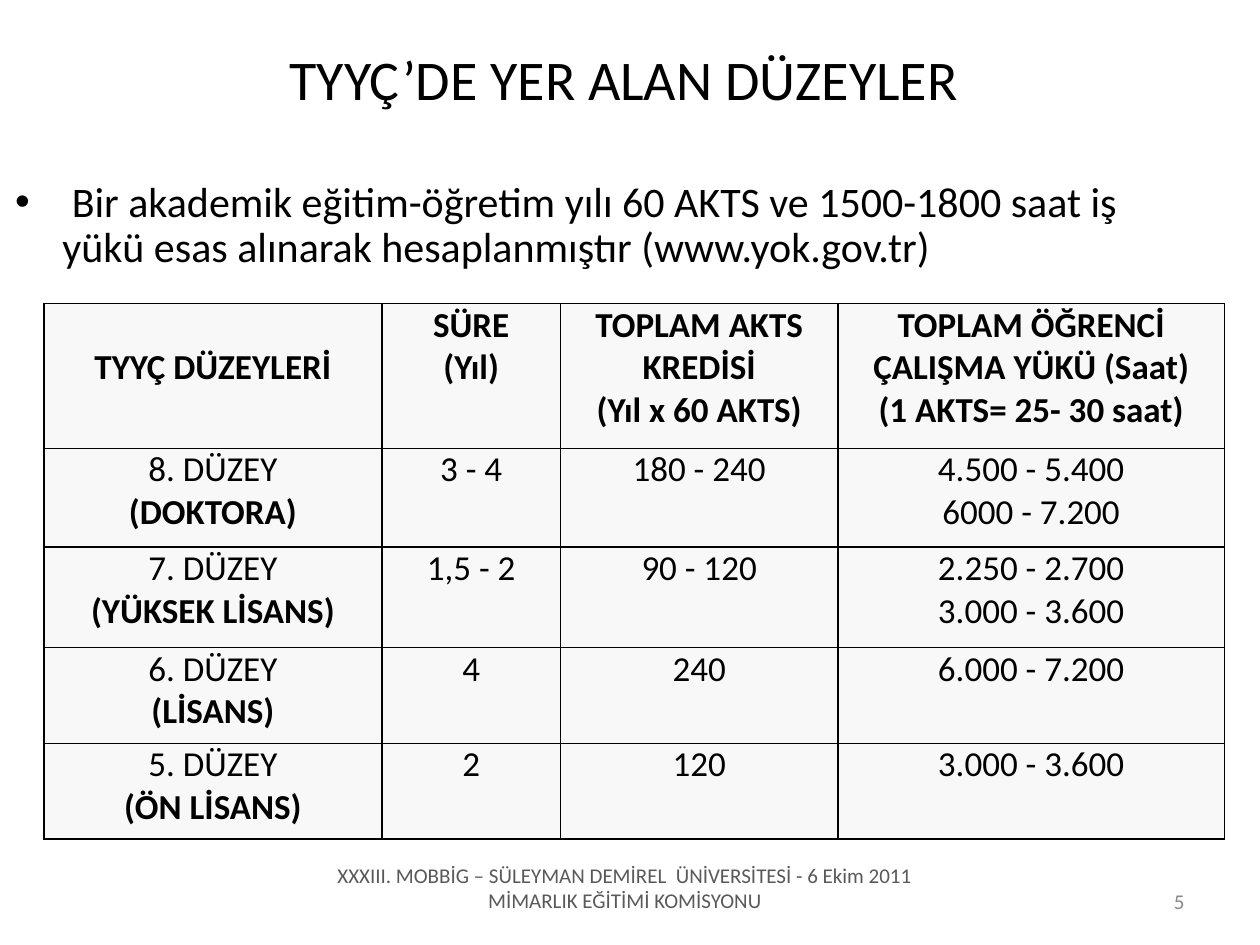
from lxml.etree import SubElement
from pptx import Presentation
from pptx.dml.color import RGBColor
from pptx.enum.text import MSO_ANCHOR as Anchor, MSO_AUTO_SIZE as AutoSize, PP_ALIGN as Align
from pptx.oxml.ns import qn
from pptx.util import Pt

# Content: a cell is a list of lines, a line marked with True is bold
TITLE = "TYYÇ’DE YER ALAN DÜZEYLER"
BODY = (" Bir akademik eğitim-öğretim yılı 60 AKTS ve 1500-1800 saat iş yükü "
        "esas alınarak hesaplanmıştır (www.yok.gov.tr)")
HEADER = [
    ["TYYÇ DÜZEYLERİ"],
    ["SÜRE", "(Yıl)"],
    ["TOPLAM AKTS KREDİSİ", "(Yıl x 60 AKTS)"],
    ["TOPLAM ÖĞRENCİ ÇALIŞMA YÜKÜ (Saat)", "(1 AKTS= 25- 30 saat)"],
]
LEVELS = [
    ("8. DÜZEY", "(DOKTORA)", "3 - 4", "180 - 240", ["4.500 - 5.400", "6000 - 7.200"]),
    ("7. DÜZEY", "(YÜKSEK LİSANS)", "1,5 - 2", "90 - 120", ["2.250 - 2.700", "3.000 - 3.600"]),
    ("6. DÜZEY", "(LİSANS)", "4", "240", ["6.000 - 7.200"]),
    ("5. DÜZEY", "(ÖN LİSANS)", "2", "120", ["3.000 - 3.600"]),
]
FOOTER = ["XXXIII. MOBBİG – SÜLEYMAN DEMİREL  ÜNİVERSİTESİ - 6 Ekim 2011",
          "MİMARLIK EĞİTİMİ KOMİSYONU"]
PAGE = "5"

# Format
FONT = "Calibri"
BLACK = RGBColor(0x00, 0x00, 0x00)
DARK_GREY = RGBColor(0x59, 0x59, 0x59)
GREY = RGBColor(0x89, 0x89, 0x89)
CELL_FILL = RGBColor(0xF8, 0xF8, 0xF8)
COL_WIDTHS = [193, 102.2, 158.4, 221]
ROW_HEIGHTS = [82.8, 56.2, 57.6, 54.7, 54.7]
HEADER_LINE = 24.4


def write(p, *lines, size, color=BLACK, bold=(False,), align=Align.CENTER):
    """Fill a paragraph with lines; bold holds one flag per line, or one for all."""
    p.alignment = align
    flags = bold if len(bold) == len(lines) else bold * len(lines)
    for i, (line, flag) in enumerate(zip(lines, flags)):
        if i:
            p.add_line_break()
        r = p.add_run()
        r.text = line
        f = r.font
        f.name, f.size, f.bold = FONT, Pt(size), flag
        f.color.rgb = color


def place(sp, left, top, width, height, anchor):
    sp.left, sp.top, sp.width, sp.height = map(Pt, (left, top, width, height))
    tf = sp.text_frame
    tf.word_wrap = True
    tf.auto_size = AutoSize.NONE
    tf.vertical_anchor = anchor
    return tf


def add_borders(cell):
    tc_pr = cell._tc.get_or_add_tcPr()
    for side in ("lnL", "lnR", "lnT", "lnB"):
        ln = SubElement(tc_pr, qn(f"a:{side}"), w=str(Pt(1)))
        fill = SubElement(ln, qn("a:solidFill"))
        SubElement(fill, qn("a:srgbClr"), val=str(BLACK))


prs = Presentation()
prs.slide_width, prs.slide_height = Pt(720), Pt(540)
s = prs.slides.add_slide(prs.slide_layouts[1])

# Title and bullet
tf = place(s.shapes.title, 19.4, 17.3, 674.6, 54.7, Anchor.MIDDLE)
write(tf.paragraphs[0], TITLE, size=32)
tf = place(s.placeholders[1], 1.4, 100, 648, 64.8, Anchor.TOP)
write(tf.paragraphs[0], BODY, size=24, align=Align.LEFT)
tf.paragraphs[0].line_spacing = 0.9

# Table of levels
rows = [[(lines, (True,)) for lines in HEADER]]
for level, name, years, credits, hours in LEVELS:
    rows.append([([level, name], (False, True)), ([years], (False,)),
                 ([credits], (False,)), (hours, (False,))])
table = s.shapes.add_table(len(rows), len(COL_WIDTHS), Pt(25.2), Pt(173.5),
                           Pt(sum(COL_WIDTHS)), Pt(sum(ROW_HEIGHTS))).table
table.first_row = table.horz_banding = False
for col, width in zip(table.columns, COL_WIDTHS):
    col.width = Pt(width)
for row, height, cells in zip(table.rows, ROW_HEIGHTS, rows):
    row.height = Pt(height)
    for cell, (lines, bold) in zip(row.cells, cells):
        add_borders(cell)
        cell.fill.solid()
        cell.fill.fore_color.rgb = CELL_FILL
        cell.margin_left = cell.margin_right = cell.margin_top = cell.margin_bottom = 0
        write(cell.text_frame.paragraphs[0], *lines, size=20, bold=bold)
table.cell(0, 0).margin_top = Pt(HEADER_LINE)  # drops the single heading to the second line

# Footer and page number
tf = place(s.shapes.add_textbox(0, 0, 0, 0), 93.6, 485.3, 527, 43.9, Anchor.MIDDLE)
for i, line in enumerate(FOOTER):
    p = tf.add_paragraph() if i else tf.paragraphs[0]
    write(p, line, size=12, color=DARK_GREY)
tf = place(s.shapes.add_textbox(0, 0, 0, 0), 516.2, 500.4, 167.8, 28.8, Anchor.MIDDLE)
write(tf.paragraphs[0], PAGE, size=12, color=GREY, align=Align.RIGHT)

prs.save("out.pptx")
